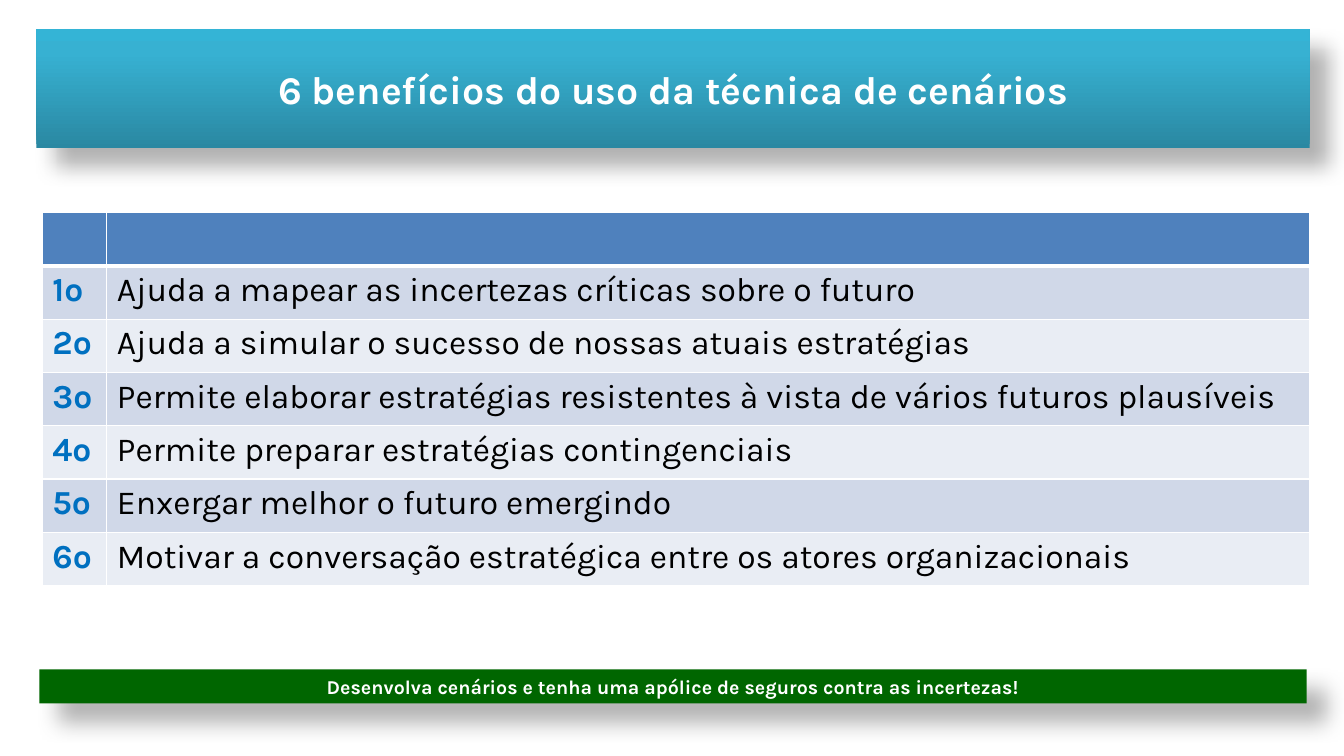
from lxml import etree
from pptx import Presentation
from pptx import util as u
from pptx.dml.color import RGBColor
from pptx.enum import shapes, text
from pptx.oxml import ns

BENEFITS = [
    "Ajuda a mapear as incertezas críticas sobre o futuro",
    "Ajuda a simular o sucesso de nossas atuais estratégias",
    "Permite elaborar estratégias resistentes à vista de vários futuros plausíveis",
    "Permite preparar estratégias contingenciais",
    "Enxergar melhor o futuro emergindo",
    "Motivar a conversação estratégica entre os atores organizacionais",
]


def color(value):
    return RGBColor.from_string(value)


def element(parent, tag, **attributes):
    values = {name: str(value) for name, value in attributes.items()}
    return etree.SubElement(parent, ns.qn("a:" + tag), values)


class SlideBuilder:
    font = "Karla"
    white = "FFFFFF"
    number = "0070C0"
    body = "000000"
    header = "4F81BD"
    bands = ("D0D8E8", "E9EDF4")

    def __init__(self, presentation):
        self.width = presentation.slide_width
        self.height = presentation.slide_height
        self.slide = presentation.slides.add_slide(presentation.slide_layouts[6])

    def box(self, left, top, width, height):
        return (
            round(self.width * left / 100),
            round(self.height * top / 100),
            round(self.width * width / 100),
            round(self.height * height / 100),
        )

    def add_text(self, paragraph, words, size, ink, bold):
        run = paragraph.add_run()
        run.text = words
        run.font.name = self.font
        run.font.size = u.Pt(size)
        run.font.bold = bold
        run.font.color.rgb = color(ink)

    def banner(self, area, words, size, stops):
        shape = self.slide.shapes.add_shape(
            shapes.MSO_SHAPE.RECTANGLE, *self.box(*area)
        )
        shape.line.fill.background()
        if len(stops) == 1:
            shape.fill.solid()
            shape.fill.fore_color.rgb = color(stops[0][1])
        else:
            self.gradient(shape, stops)
        self.cast_shadow(shape)
        frame = shape.text_frame
        frame.word_wrap = True
        frame.vertical_anchor = text.MSO_ANCHOR.MIDDLE
        paragraph = frame.paragraphs[0]
        paragraph.alignment = text.PP_ALIGN.CENTER
        self.add_text(paragraph, words, size, self.white, True)

    def gradient(self, shape, stops):
        shape.fill.gradient()
        shape.fill.gradient_angle = 90
        stop_list = next(shape._element.iter(ns.qn("a:gsLst")))
        for stop in list(stop_list):
            stop_list.remove(stop)
        for position, value in stops:
            stop = element(stop_list, "gs", pos=position * 1000)
            element(stop, "srgbClr", val=value)

    def cast_shadow(self, shape):
        shape.shadow.inherit = False
        effects = next(shape._element.iter(ns.qn("a:effectLst")))
        shadow = element(
            effects, "outerShdw", blurRad=u.Pt(15), dist=u.Pt(18),
            dir=45 * 60000, algn="ctr", rotWithShape=0,
        )
        shade = element(shadow, "srgbClr", val="000000")
        element(shade, "alpha", val=30000)

    def style_cell(self, cell, fill, top, bottom):
        properties = cell._tc.get_or_add_tcPr()
        for side, points in (("L", 1), ("R", 1), ("T", top), ("B", bottom)):
            border = element(properties, "ln" + side, w=u.Pt(points))
            element(element(border, "solidFill"), "srgbClr", val=self.white)
        cell.fill.solid()
        cell.fill.fore_color.rgb = color(fill)

    def ranking(self, area, number_share, entries, size):
        left, top, width, height = self.box(*area)
        row_count = len(entries) + 1
        table = self.slide.shapes.add_table(
            row_count, 2, left, top, width, height
        ).table
        table.columns[0].width = round(width * number_share / 100)
        table.columns[1].width = width - table.columns[0].width
        for index, row in enumerate(table.rows):
            row.height = round(height / row_count)
            fill = self.bands[(index - 1) % 2] if index else self.header
            for cell in row.cells:
                self.style_cell(
                    cell, fill, 3 if index == 1 else 1, 1 if index else 3
                )
        for index, entry in enumerate(entries, 1):
            number, benefit = (
                table.cell(index, column).text_frame.paragraphs[0]
                for column in range(2)
            )
            self.add_text(number, f"{index}º", size, self.number, True)
            self.add_text(benefit, entry, size, self.body, False)


def main():
    presentation = Presentation()
    presentation.slide_width = u.Inches(13.33)
    presentation.slide_height = u.Inches(7.5)
    builder = SlideBuilder(presentation)
    builder.banner(
        (2.7, 3.87, 94.75, 15.73),
        "6 benefícios do uso da técnica de cenários",
        28,
        [(0, "2A88A2"), (80, "37B1D2"), (100, "34B4D6")],
    )
    builder.ranking((3.15, 28.13, 94.3, 49.33), 5.09, BENEFITS, 24)
    builder.banner(
        (2.93, 88.53, 94.3, 4.53),
        "Desenvolva cenários e tenha uma apólice de seguros contra as incertezas!",
        14,
        [(0, "006600")],
    )
    presentation.save("out.pptx")


if __name__ == "__main__":
    main()
